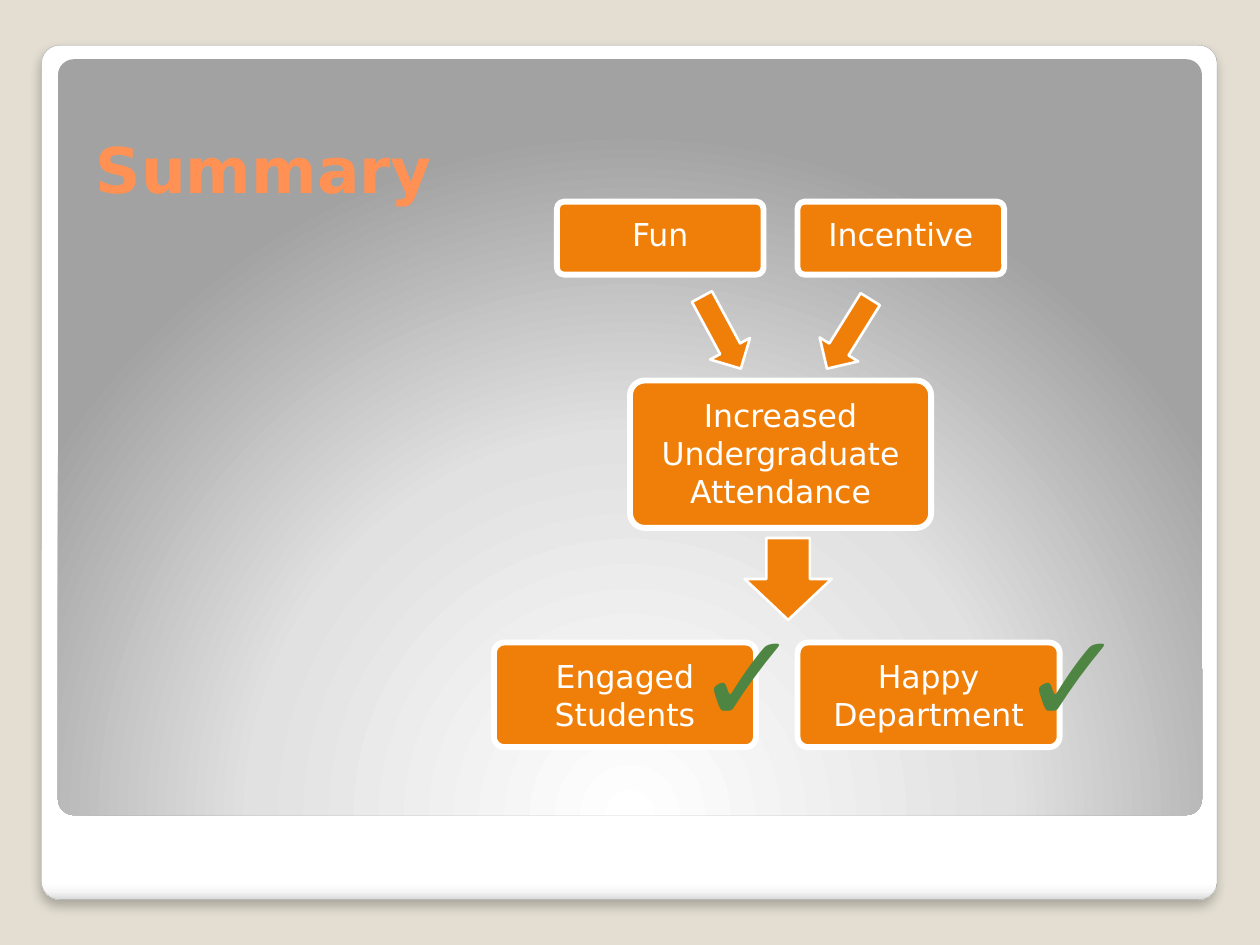
from dataclasses import dataclass

from pptx import Presentation
from pptx.dml.color import RGBColor
from pptx.enum.shapes import MSO_SHAPE
from pptx.enum.text import MSO_ANCHOR, PP_ALIGN
from pptx.oxml import parse_xml
from pptx.oxml.ns import nsdecls, qn
from pptx.util import Inches, Pt

ROUNDED = MSO_SHAPE.ROUNDED_RECTANGLE
ARROW = MSO_SHAPE.RIGHT_ARROW
TOP, MIDDLE = MSO_ANCHOR.TOP, MSO_ANCHOR.MIDDLE
LEFT, CENTER = PP_ALIGN.LEFT, PP_ALIGN.CENTER


@dataclass(frozen=True)
class Theme:
    """Colours, font and type sizes of the slide."""
    font: str = "DejaVu Sans"
    backdrop: str = "E3DED1"
    frame_line: str = "A4A4A4"
    heading: str = "FF9155"
    accent: str = "F07F09"
    light: str = "FFFFFF"
    tick: str = "4E8542"
    heading_size: float = 36
    label_size: float = 18
    tick_size: float = 72
    box_line: float = 3.35
    arrow_line: float = 1.5
    frame_stops: tuple = ((0, "FFFFFF"), (98, "FFFFFF"), (99, "F7F7F7"), (100, "DADADA"))
    panel_stops: tuple = ((0, "FFFFFF"), (55, "E1E1E1"), (100, "A2A2A2"))


THEME = Theme()


@dataclass(frozen=True)
class Box:
    """A rectangle in inches."""
    left: float
    top: float
    width: float
    height: float

    def inside(self, left, top, width, height):
        """Return a box offset from this one's top left corner."""
        return Box(self.left + left, self.top + top, width, height)

    def lengths(self):
        """Return left, top, width and height as lengths."""
        return [Inches(v) for v in (self.left, self.top, self.width, self.height)]


def rgb(value):
    """Turn a hex string into a colour."""
    return RGBColor.from_string(value)


def style_text(frame, size, color, align, bold=False):
    """Format every paragraph and run of a text frame."""
    for paragraph in frame.paragraphs:
        paragraph.alignment = align
        for run in paragraph.runs:
            run.font.name = THEME.font
            run.font.size = Pt(size)
            run.font.bold = bold
            run.font.color.rgb = rgb(color)


def add_solid(slide, kind, box, line_width):
    """Add an accent shape with a light outline."""
    solid = slide.shapes.add_shape(kind, *box.lengths())
    solid.shadow.inherit = False
    solid.fill.solid()
    solid.fill.fore_color.rgb = rgb(THEME.accent)
    solid.line.color.rgb = rgb(THEME.light)
    solid.line.width = Pt(line_width)
    return solid


def add_panel(slide, box, stops, direction):
    """Add a rounded panel with a gradient fill."""
    panel = slide.shapes.add_shape(ROUNDED, *box.lengths())
    panel.adjustments[0] = 0.021
    panel.shadow.inherit = False
    panel.fill.background()
    panel.line.fill.background()
    stop_xml = "".join(
        f'<a:gs pos="{position * 1000}"><a:srgbClr val="{color}"/></a:gs>'
        for position, color in stops)
    gradient = parse_xml(
        f'<a:gradFill {nsdecls("a")} rotWithShape="1">'
        f'<a:gsLst>{stop_xml}</a:gsLst>{direction}</a:gradFill>')
    properties = panel._element.spPr
    properties.replace(properties.find(qn("a:noFill")), gradient)
    return panel


def add_backdrop(slide, box):
    """Draw the shadowed frame and the shaded panel within it."""
    slide.background.fill.solid()
    slide.background.fill.fore_color.rgb = rgb(THEME.backdrop)
    frame = add_panel(slide, box, THEME.frame_stops, '<a:lin ang="5400000" scaled="0"/>')
    frame.line.color.rgb = rgb(THEME.frame_line)
    frame.line.width = Pt(0.16)
    frame._element.spPr.find(qn("a:effectLst")).append(parse_xml(
        f'<a:outerShdw {nsdecls("a")} blurRad="{Pt(6)}" dist="{Pt(4)}" dir="5400000" '
        'algn="tl" rotWithShape="0"><a:srgbClr val="000000">'
        '<a:alpha val="25000"/></a:srgbClr></a:outerShdw>'))
    add_panel(slide, box.inside(0.13, 0.11, 9.08, 6), THEME.panel_stops,
              '<a:path path="circle"><a:fillToRect l="50000" t="175000" '
              'r="50000" b="-75000"/></a:path>')


def add_heading(slide, box):
    """Place the title in front of the backdrop."""
    heading = slide.shapes.title
    heading.left, heading.top, heading.width, heading.height = box.lengths()
    heading.text_frame.text = "Summary"
    heading.text_frame.vertical_anchor = MIDDLE
    style_text(heading.text_frame, THEME.heading_size, THEME.heading, LEFT, bold=True)
    slide.shapes._spTree.append(heading._element)


def add_step(slide, box, label):
    """Add a labelled box of the flow."""
    step = add_solid(slide, ROUNDED, box, THEME.box_line)
    step.adjustments[0] = 0.1
    frame = step.text_frame
    frame.text = label
    frame.word_wrap = True
    frame.vertical_anchor = TOP
    frame.margin_top = Inches(0.09)
    style_text(frame, THEME.label_size, THEME.light, CENTER)


def add_arrow(slide, box, angle):
    """Add a block arrow turned by an angle."""
    add_solid(slide, ARROW, box, THEME.arrow_line).rotation = angle


def add_tick(slide, box):
    """Add a large check mark."""
    tick = slide.shapes.add_textbox(*box.lengths())
    tick.text_frame.word_wrap = True
    tick.text_frame.text = "✓"
    style_text(tick.text_frame, THEME.tick_size, THEME.tick, LEFT, bold=True)


def add_flow(slide, box):
    """Lay out causes, their effect and the two ticked outcomes."""
    right_column = 2.41
    for left, cause in ((0.5, "Fun"), (right_column, "Incentive")):
        add_step(slide, box.inside(left, 0, 1.64, 0.58), cause)
    add_step(slide, box.inside(1.08, 1.42, 2.39, 1.17),
             "Increased\nUndergraduate Attendance")
    for left, top, height, angle in (
            (1.48, 0.86, 0.36, 61.6), (2.49, 0.87, 0.36, 121.9), (2.01, 2.65, 0.69, 90)):
        add_arrow(slide, box.inside(left, top, 0.65, height), angle)
    for left, tick_left, outcome in (
            (0, 1.5, "Engaged Students"), (right_column, 4.08, "Happy Department")):
        add_step(slide, box.inside(left, 3.5, 2.08, 0.83), outcome)
        add_tick(slide, box.inside(tick_left, 3.09, 0.58, 1.31))


def main():
    """Build and save the summary slide."""
    deck = Presentation()
    deck.slide_width, deck.slide_height = Inches(10), Inches(7.5)
    slide = deck.slides.add_slide(deck.slide_layouts[5])
    add_backdrop(slide, Box(0.33, 0.36, 9.33, 6.78))
    add_heading(slide, Box(0.66, 0.85, 8.2, 0.97))
    add_flow(slide, Box(3.92, 1.6, 4.66, 4.4))
    deck.save("out.pptx")


if __name__ == "__main__":
    main()
